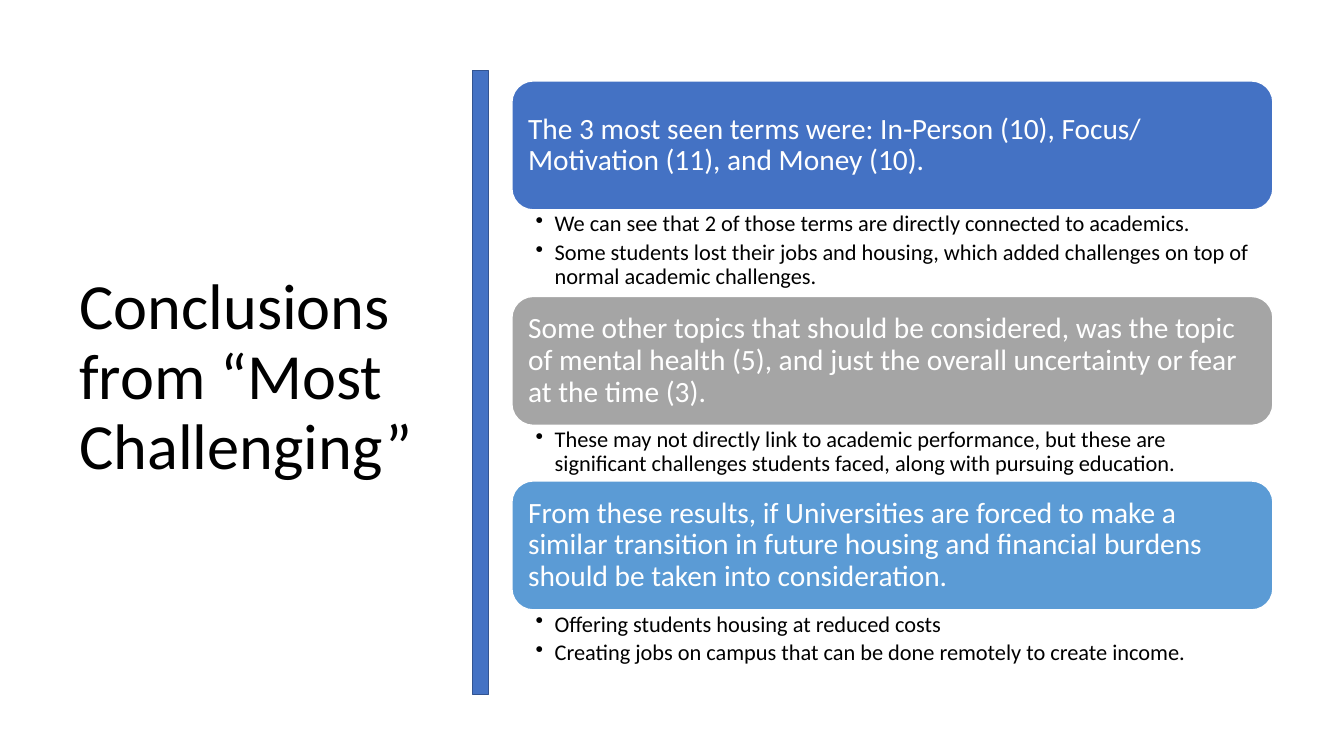
import pptx
import pptx.dml.color
import pptx.enum.shapes
import pptx.enum.text
import pptx.util
from lxml import etree

Cm = pptx.util.Cm
Pt = pptx.util.Pt
RGBColor = pptx.dml.color.RGBColor
MSO_SHAPE = pptx.enum.shapes.MSO_SHAPE
MSO_ANCHOR = pptx.enum.text.MSO_ANCHOR
PP_ALIGN = pptx.enum.text.PP_ALIGN

BLUE = RGBColor(0x44, 0x72, 0xC4)
DARK_BLUE = RGBColor(0x32, 0x54, 0x91)
GRAY = RGBColor(0xA5, 0xA5, 0xA5)
LIGHT_BLUE = RGBColor(0x5B, 0x9B, 0xD5)
WHITE = RGBColor(0xFF, 0xFF, 0xFF)
BLACK = RGBColor(0x00, 0x00, 0x00)
FONT = "Calibri"

TITLE = "Conclusions from “Most Challenging”"
CONCLUSIONS = [
    (
        "The 3 most seen terms were: In-Person (10), Focus/ Motivation (11), and Money (10).",
        BLUE,
        [
            "We can see that 2 of those terms are directly connected to academics.",
            "Some students lost their jobs and housing, which added challenges on top of normal academic challenges.",
        ],
        2.18,
    ),
    (
        "Some other topics that should be considered, was the topic of mental health (5), and just the overall uncertainty or fear at the time (3).",
        GRAY,
        [
            "These may not directly link to academic performance, but these are significant challenges students faced, along with pursuing education.",
        ],
        1.4,
    ),
    (
        "From these results, if Universities are forced to make a similar transition in future housing and financial burdens should be taken into consideration.",
        LIGHT_BLUE,
        [
            "Offering students housing at reduced costs",
            "Creating jobs on campus that can be done remotely to create income.",
        ],
        1.55,
    ),
]

COLUMN_LEFT, COLUMN_TOP, COLUMN_WIDTH = 12.9, 2.04, 19.18
CARD_HEIGHT = 3.25
BULLET_INDENT = Cm(0.48)


def write(frame, lines, size, color, anchor, insets, space_after=0):
    frame.text = "\n".join(lines)
    frame.word_wrap = True
    frame.vertical_anchor = anchor
    frame.margin_left, frame.margin_top, frame.margin_right, frame.margin_bottom = map(Cm, insets)
    for paragraph in frame.paragraphs:
        paragraph.alignment = PP_ALIGN.LEFT
        paragraph.line_spacing = 0.9
        paragraph.space_after = Pt(space_after)
        for run in paragraph.runs:
            run.font.name = FONT
            run.font.size = Pt(size)
            run.font.color.rgb = color


def add_bullets(frame):
    for paragraph in frame.paragraphs:
        properties = paragraph._p.get_or_add_pPr()
        properties.set("marL", str(BULLET_INDENT))
        properties.set("indent", str(-BULLET_INDENT))
        bullet = etree.SubElement(properties, pptx.oxml.ns.qn("a:buChar"))
        bullet.set("char", "•")


def add_block(slide, kind, box, fill, line):
    block = slide.shapes.add_shape(kind, *map(Cm, box))
    block.shadow.inherit = False
    block.fill.solid()
    block.fill.fore_color.rgb = fill
    block.line.color.rgb = line
    block.line.width = Pt(1)
    return block


def main():
    deck = pptx.Presentation()
    deck.slide_width, deck.slide_height = Cm(33.87), Cm(19.05)
    slide = deck.slides.add_slide(deck.slide_layouts[6])

    title = slide.shapes.add_textbox(Cm(1.75), Cm(1.78), Cm(9.5), Cm(15.52))
    write(title.text_frame, [TITLE], 46, BLACK, MSO_ANCHOR.MIDDLE, (0.25, 0.13, 0.25, 0.13))

    top = COLUMN_TOP
    for heading, color, notes, notes_height in CONCLUSIONS:
        card = add_block(
            slide, MSO_SHAPE.ROUNDED_RECTANGLE, (COLUMN_LEFT, top, COLUMN_WIDTH, CARD_HEIGHT), color, WHITE
        )
        write(card.text_frame, [heading], 21, WHITE, MSO_ANCHOR.MIDDLE, (0.25, 0.1, 0.25, 0.1))
        top += CARD_HEIGHT

        details = slide.shapes.add_textbox(Cm(COLUMN_LEFT), Cm(top), Cm(COLUMN_WIDTH), Cm(notes_height))
        write(details.text_frame, notes, 16, BLACK, MSO_ANCHOR.TOP, (0.6, 0.07, 0.4, 0.07), 3)
        add_bullets(details.text_frame)
        top += notes_height

    add_block(slide, MSO_SHAPE.RECTANGLE, (11.91, 1.78, 0.41, 15.72), BLUE, DARK_BLUE)
    deck.save("out.pptx")


if __name__ == "__main__":
    main()
